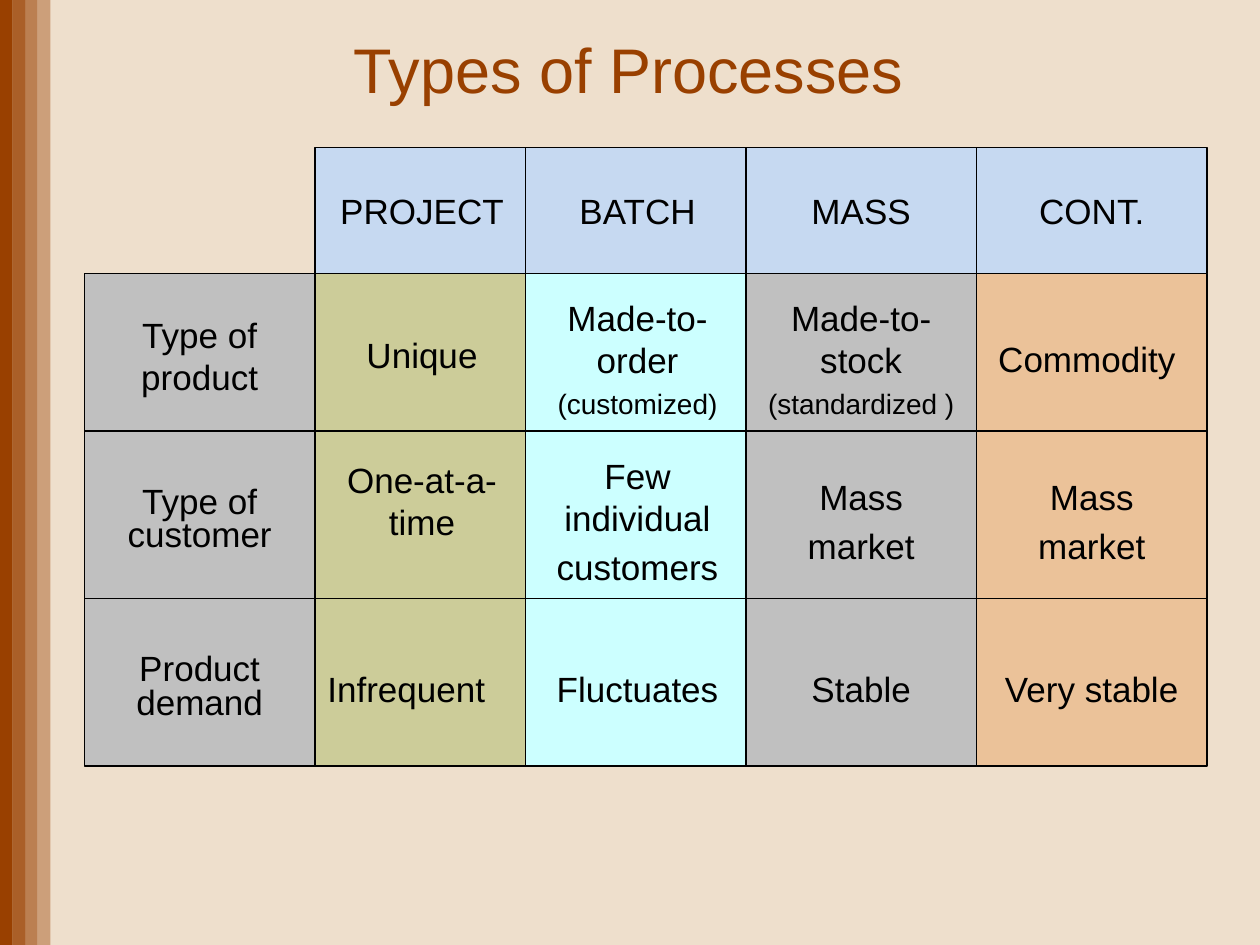
from lxml import etree
from pptx import Presentation
from pptx.dml.color import RGBColor
from pptx.enum.shapes import MSO_SHAPE
from pptx.enum.text import MSO_ANCHOR, PP_ALIGN
from pptx.oxml.ns import qn
from pptx.util import Inches, Pt

RECTANGLE = MSO_SHAPE.RECTANGLE
MIDDLE = MSO_ANCHOR.MIDDLE
CENTER, LEFT = PP_ALIGN.CENTER, PP_ALIGN.LEFT

COLORS = {
    "page": "EEDFCC", "brown": "994000", "black": "000000", "header": "C6D9F1",
    "gray": "C0C0C0", "olive": "CCCC99", "cyan": "CCFFFF", "orange": "EBC299",
}
FONT = "Arial"
BODY_SIZE, NOTE_SIZE = 20, 16
STRIPE_WIDTH = 0.1

# Each column: left, width, fill below the header row
COLUMNS = [
    (0.67, 1.83, "gray"),
    (2.5, 1.7, "olive"),
    (4.17, 1.78, "cyan"),
    (5.92, 1.83, "gray"),
    (7.75, 1.83, "orange"),
]
# Each row: top, height, cell texts (a line break starts a new paragraph)
ROWS = [
    (1.17, 1, [None, "PROJECT", "BATCH", "MASS", "CONT."]),
    (2.17, 1.25, ["Type of product", "Unique", "Made-to- order\n(customized)",
                  "Made-to- stock\n(standardized )", "Commodity "]),
    (3.42, 1.33, ["Type of customer", "One-at-a-time", "Few individual\ncustomers",
                  "Mass\nmarket", "Mass\nmarket"]),
    (4.75, 1.33, ["Product demand", "Infrequent", "Fluctuates", "Stable",
                  "Very stable"]),
]
HEADER_INSETS = (0.1, 0.05, 0.1, 0.05)
CELL_INSETS = (0.1, 0.15, 0.1, 0.05)
SPECIAL_INSETS = {
    "Type of product": (0, 0.05, 0, 0),
    "One-at-a-time": (0.1, 0.15, 0.1, 0.38),
}
TIGHT_LINES = {"Unique", "Type of customer", "Product demand"}


def color(name):
    return RGBColor.from_string(COLORS[name])


def write_text(box, text, size, color_name, insets):
    """Fill a box with centred paragraphs; a note in brackets is set smaller."""
    frame = box.text_frame
    frame.word_wrap = True
    frame.vertical_anchor = MIDDLE
    (frame.margin_left, frame.margin_top,
     frame.margin_right, frame.margin_bottom) = map(Inches, insets)
    frame.text = text
    for index, para in enumerate(frame.paragraphs):
        para_size = NOTE_SIZE if para.text.startswith("(") else size
        para.alignment = CENTER
        if index:
            para.space_before = Pt(0.2 * para_size)
        for span in para.runs:
            span.font.name = FONT
            span.font.size = Pt(para_size)
            span.font.color.rgb = color(color_name)


deck = Presentation()
deck.slide_width, deck.slide_height = Inches(10), Inches(7.5)
page = deck.slides.add_slide(deck.slide_layouts[6])
page.background.fill.solid()
page.background.fill.fore_color.rgb = color("page")

# Fading stripes along the left edge
for index, opacity in enumerate((100, 80, 60, 40)):
    stripe = page.shapes.add_shape(
        RECTANGLE, Inches(index * STRIPE_WIDTH), 0, Inches(STRIPE_WIDTH), deck.slide_height)
    stripe.shadow.inherit = False
    stripe.line.fill.background()
    stripe.fill.solid()
    stripe.fill.fore_color.rgb = color("brown")
    if opacity < 100:
        fill_color = stripe.fill._xPr.find(qn("a:solidFill"))[0]
        etree.SubElement(fill_color, qn("a:alpha")).set("val", str(opacity * 1000))

title = page.shapes.add_textbox(Inches(1.95), Inches(0.08), Inches(6.08), Inches(0.92))
write_text(title, "Types of Processes", 36, "brown", HEADER_INSETS)

# Comparison grid; neighbouring boxes overlap slightly
for row, (top, height, texts) in enumerate(ROWS):
    for (left, width, fill_name), text in zip(COLUMNS, texts):
        if text is None:
            continue
        cell = page.shapes.add_shape(
            RECTANGLE, Inches(left), Inches(top), Inches(width), Inches(height))
        cell.shadow.inherit = False
        cell.fill.solid()
        cell.fill.fore_color.rgb = color(fill_name if row else "header")
        cell.line.color.rgb = color("black")
        cell.line.width = Pt(0.75)
        insets = SPECIAL_INSETS.get(text, CELL_INSETS if row else HEADER_INSETS)
        write_text(cell, text, BODY_SIZE, "black", insets)
        first_para = cell.text_frame.paragraphs[0]
        if text in TIGHT_LINES:
            first_para.line_spacing = 0.8
        if text == "Infrequent":
            first_para.alignment = LEFT

deck.save("out.pptx")
